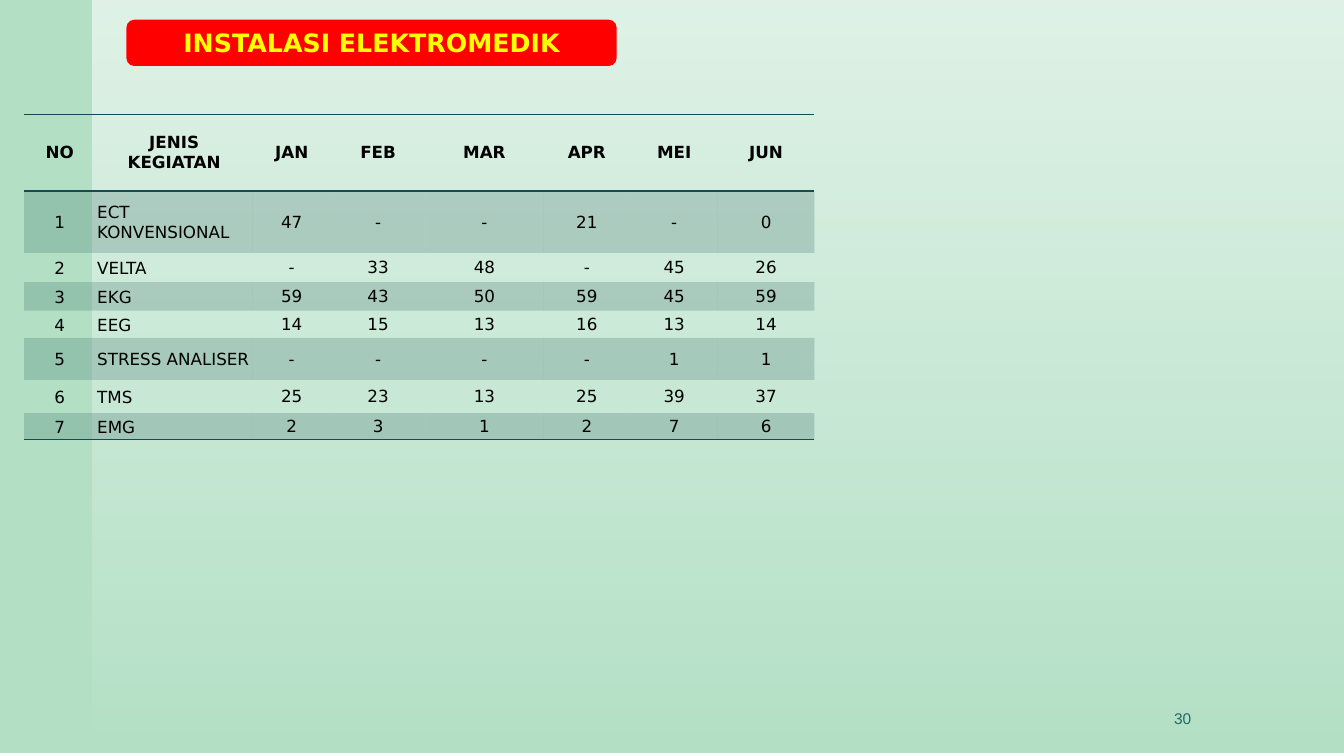
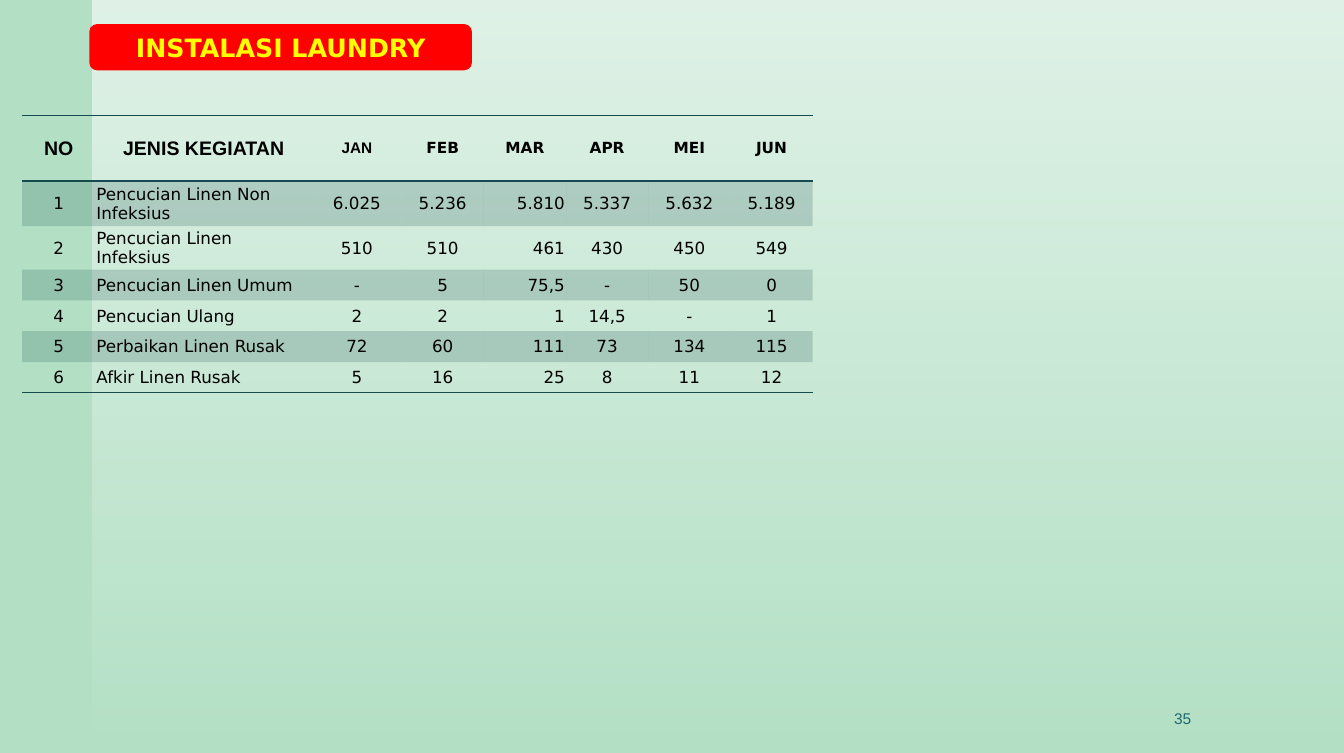
from dataclasses import dataclass

from lxml import etree
from pptx import Presentation
from pptx.dml.color import RGBColor as RGB
from pptx.enum.shapes import MSO_SHAPE as SHAPE
from pptx.enum.text import MSO_ANCHOR as ANCHOR, MSO_AUTO_SIZE as AUTO, PP_ALIGN as ALIGN
from pptx.oxml.ns import qn
from pptx.util import Cm, Pt


@dataclass(frozen=True)
class Theme:
    mint: str = "B3E0C5"
    white: str = "FFFFFF"
    red: str = "FF0000"
    yellow: str = "FFFF00"
    black: str = "000000"
    teal: str = "164B4F"
    number: str = "1F696F"
    sans: str = "DejaVu Sans"
    arial: str = "Arial"
    title_size: float = 18.1
    body_size: float = 12
    number_size: float = 11.1
    rule: float = 1
    band_alpha: int = 20
    glow_alpha: int = 60


T = Theme()

# Content; all lengths in cm
MONTHS = ["JAN", "FEB", "MAR", "APR", "MEI", "JUN"]
HEADER = ["NO", "JENIS KEGIATAN", *MONTHS]
SLIDES = [
    {
        "title": "INSTALASI ELEKTROMEDIK", "title_box": (3.2, 0.5, 12.4, 1.17),
        "number": "30", "table_at": (0.61, 2.9),
        "cols": [1.8, 3.99, 1.96, 2.41, 2.97, 2.21, 2.21, 2.44],
        "row_heights": [1.93, 1.57, 0.74, 0.72, 0.69, 1.06, 0.84, 0.68],
        "label_margin": 0.05, "right_cols": [],
        "header_format": [{}] * 8,
        "rows": [
            ("ECT KONVENSIONAL", "47", "-", "-", "21", "-", "0"),
            ("VELTA", "-", "33", "48", "-", "45", "26"),
            ("EKG", "59", "43", "50", "59", "45", "59"),
            ("EEG", "14", "15", "13", "16", "13", "14"),
            ("STRESS ANALISER", "-", "-", "-", "-", "1", "1"),
            ("TMS", "25", "23", "13", "25", "39", "37"),
            ("EMG", "2", "3", "1", "2", "7", "6"),
        ],
    },
    {
        "title": "INSTALASI LAUNDRY", "title_box": (2.26, 0.61, 9.68, 1.17),
        "number": "35", "table_at": (0.56, 2.92),
        "cols": [1.85, 5.49, 2.26] + [2.08] * 5,
        "row_heights": [1.66, 1.14, 1.1] + [0.78] * 4,
        "label_margin": 0.03, "right_cols": [4],
        "header_format": [{"size": 14, "font": T.arial}] * 2
        + [{"size": 11, "font": T.arial}] + [{"size": 11}] * 5,
        "rows": [
            ("Pencucian Linen Non Infeksius", "6.025", "5.236", "5.810", "5.337", "5.632", "5.189"),
            ("Pencucian Linen Infeksius", "510", "510", "461", "430", "450", "549"),
            ("Pencucian Linen Umum", "-", "5", "75,5", "-", "50", "0"),
            ("Pencucian Ulang", "2", "2", "1", "14,5", "-", "1"),
            ("Perbaikan Linen Rusak", "72", "60", "111", "73", "134", "115"),
            ("Afkir Linen Rusak", "5", "16", "25", "8", "11", "12"),
        ],
    },
]
WIDTH, HEIGHT, STRIP = 34, 19.05, 2.34
NUMBER_BOX = (22.47, 17.67, 7.92, 1.02)
NO_STYLE = "{2D5ABB26-0587-4C30-8999-92F81FD0307C}"


def write(tf, text, size=T.body_size, font=T.sans, color=T.black, bold=False, align=ALIGN.CENTER):
    p = tf.paragraphs[0]
    p.alignment = align
    r = p.add_run()
    r.text = text
    r.font.size, r.font.name, r.font.bold = Pt(size), font, bold
    r.font.color.rgb = RGB.from_string(color)


def solid(fill, color):
    fill.solid()
    fill.fore_color.rgb = RGB.from_string(color)


def set_alpha(color_el, percent):
    etree.SubElement(color_el, qn("a:alpha"), val=str(percent * 1000))


def set_borders(cell, *sides):
    """Rule the given sides (lnT, lnB); these elements must precede the fill."""
    for i, side in enumerate(sides):
        ln = etree.Element(qn(f"a:{side}"), w=str(Pt(T.rule)))
        paint = etree.SubElement(ln, qn("a:solidFill"))
        etree.SubElement(paint, qn("a:srgbClr"), val=T.teal)
        cell._tc.get_or_add_tcPr().insert(i, ln)


def set_margins(cell, side, top, bottom):
    cell.margin_left = cell.margin_right = Cm(side)
    cell.margin_top, cell.margin_bottom = Cm(top), Cm(bottom)


def add_plain_shape(slide, kind, box):
    sp = slide.shapes.add_shape(kind, *map(Cm, box))
    sp.shadow.inherit = False
    sp.line.fill.background()
    return sp


def style_master(master, slide):
    """Mint background with a fading white panel beside the left strip."""
    solid(master.background.fill, T.mint)
    sp = add_plain_shape(slide, SHAPE.RECTANGLE, (STRIP, 0, WIDTH - STRIP, HEIGHT))
    sp.fill.gradient()
    sp.fill.gradient_angle = 270
    for stop in sp.fill.gradient_stops:
        stop.color.rgb = RGB.from_string(T.white)
    for color_el, alpha in zip(sp.element.spPr.iter(qn("a:srgbClr")), (T.glow_alpha, 0)):
        set_alpha(color_el, alpha)
    master.shapes.element.insert(2, sp.element)


def add_title(slide, text, box):
    """Red rounded plate with the title placeholder on top of it."""
    plate = add_plain_shape(slide, SHAPE.ROUNDED_RECTANGLE, box)
    solid(plate.fill, T.red)
    sp = slide.shapes.title
    sp.left, sp.top, sp.width, sp.height = map(Cm, box)
    plate.element.addnext(sp.element)
    tf = sp.text_frame
    tf.auto_size, tf.vertical_anchor = AUTO.NONE, ANCHOR.MIDDLE
    write(tf, text, size=T.title_size, color=T.yellow, bold=True)


def add_number(slide, text):
    tf = slide.shapes.add_textbox(*map(Cm, NUMBER_BOX)).text_frame
    tf.word_wrap, tf.vertical_anchor = True, ANCHOR.MIDDLE
    write(tf, text, size=T.number_size, font=T.arial, color=T.number, align=ALIGN.RIGHT)


def add_activity_table(slide, data):
    rows = [HEADER] + [(str(n), *row) for n, row in enumerate(data["rows"], 1)]
    cols, heights = data["cols"], data["row_heights"]
    box = (*data["table_at"], sum(cols), sum(heights))
    table = slide.shapes.add_table(len(rows), len(cols), *map(Cm, box)).table
    table.first_row = table.horz_banding = False
    table._tbl.tblPr.find(qn("a:tableStyleId")).text = NO_STYLE
    for col, width in zip(table.columns, cols):
        col.width = Cm(width)
    for row, height in zip(table.rows, heights):
        row.height = Cm(height)

    aligns = {1: ALIGN.LEFT, **{c: ALIGN.RIGHT for c in data["right_cols"]}}
    for r, row in enumerate(rows):
        for c, text in enumerate(row):
            cell = table.cell(r, c)
            cell.vertical_anchor = ANCHOR.MIDDLE
            if r % 2:
                solid(cell.fill, T.teal)
                set_alpha(next(cell._tc.iter(qn("a:srgbClr"))), T.band_alpha)
            else:
                cell.fill.background()
            if r == 0:
                set_margins(cell, 0.51, 0.2, 0.2)
                set_borders(cell, "lnT", "lnB")
                write(cell.text_frame, text, bold=True, **data["header_format"][c])
                continue
            margin = data["label_margin"] if c < 2 else 0.03
            set_margins(cell, margin, margin, 0)
            if r == len(rows) - 1:
                set_borders(cell, "lnB")
            write(cell.text_frame, text, align=aligns.get(c, ALIGN.CENTER))


def main():
    prs = Presentation()
    prs.slide_width, prs.slide_height = Cm(WIDTH), Cm(HEIGHT)
    title_only = prs.slide_layouts[5]
    for i, data in enumerate(SLIDES):
        slide = prs.slides.add_slide(title_only)
        if i == 0:
            style_master(prs.slide_master, slide)
        add_number(slide, data["number"])
        add_activity_table(slide, data)
        add_title(slide, data["title"], data["title_box"])
    prs.save("out.pptx")


if __name__ == "__main__":
    main()
